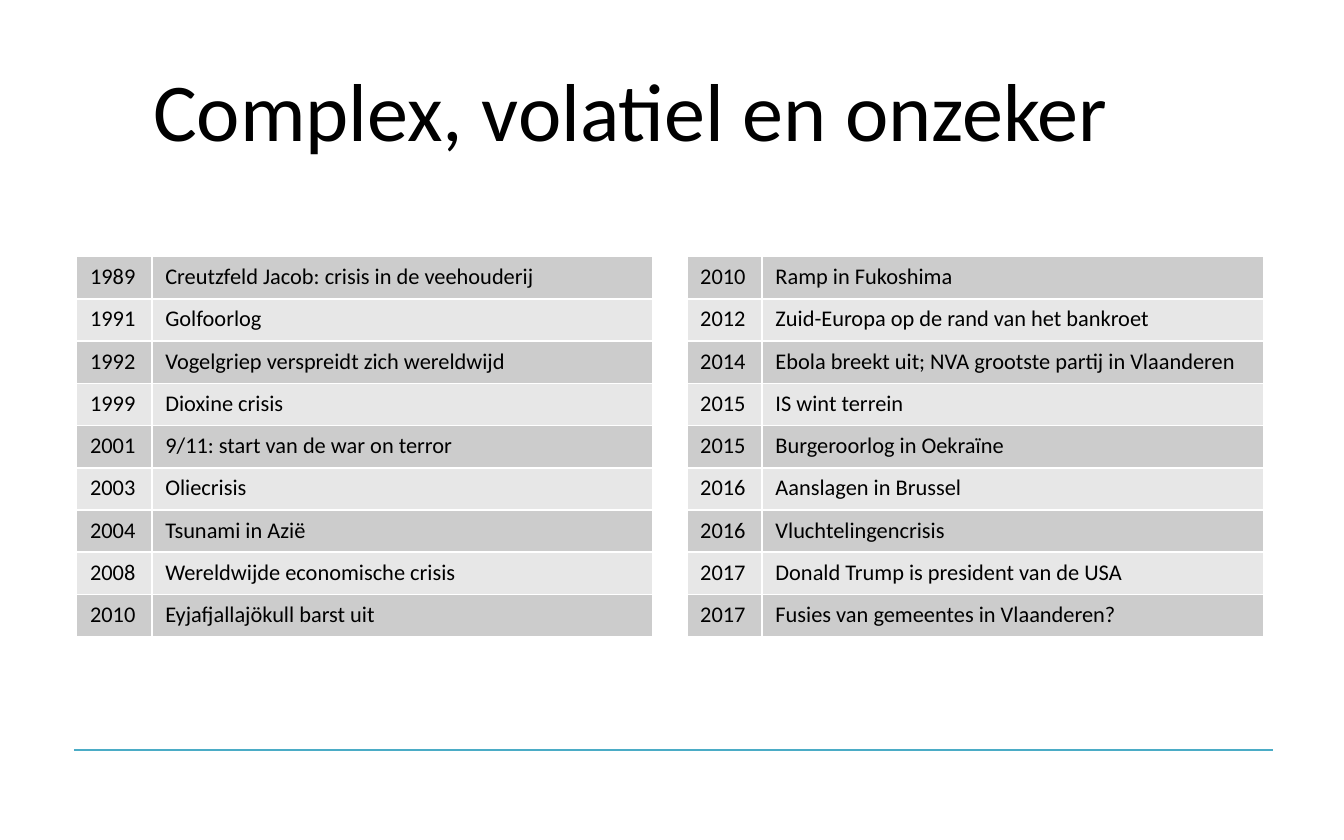
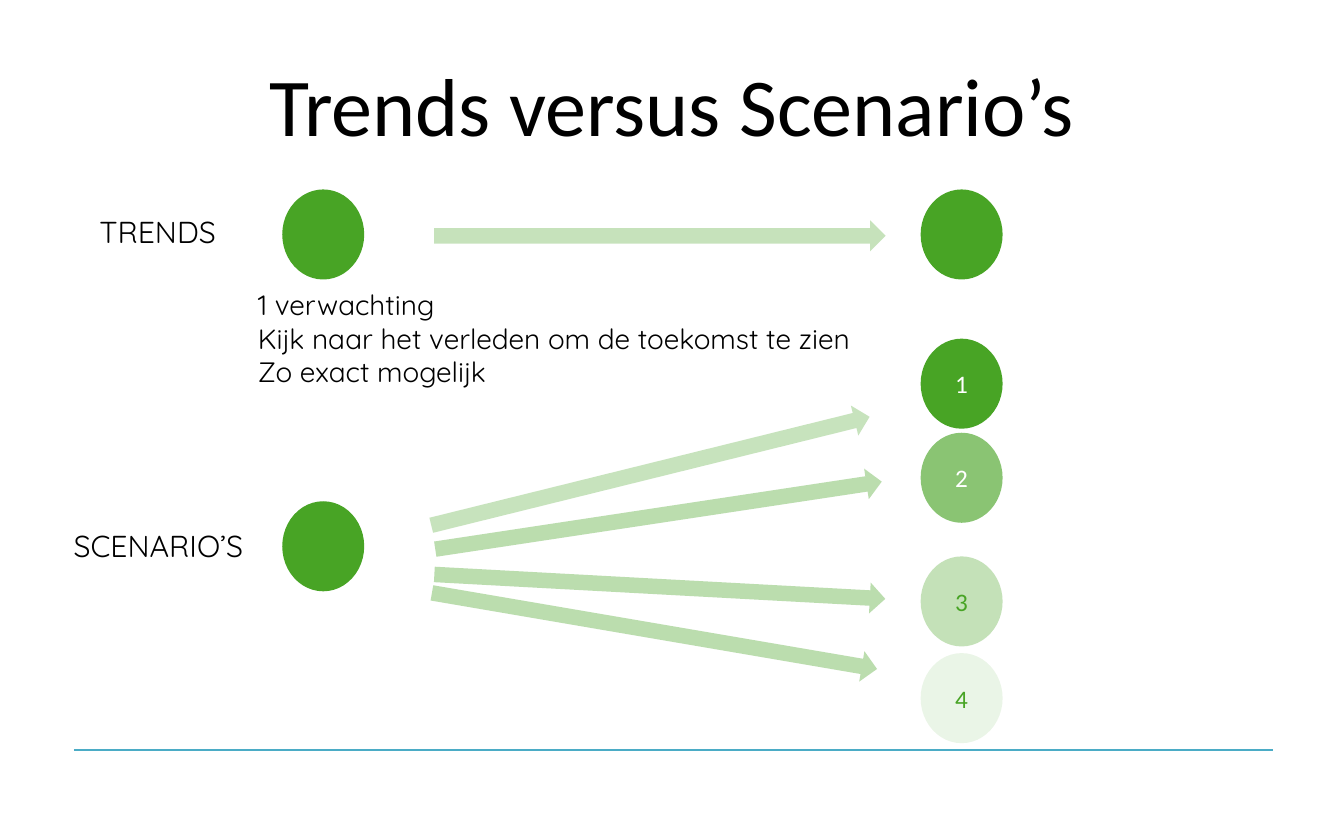
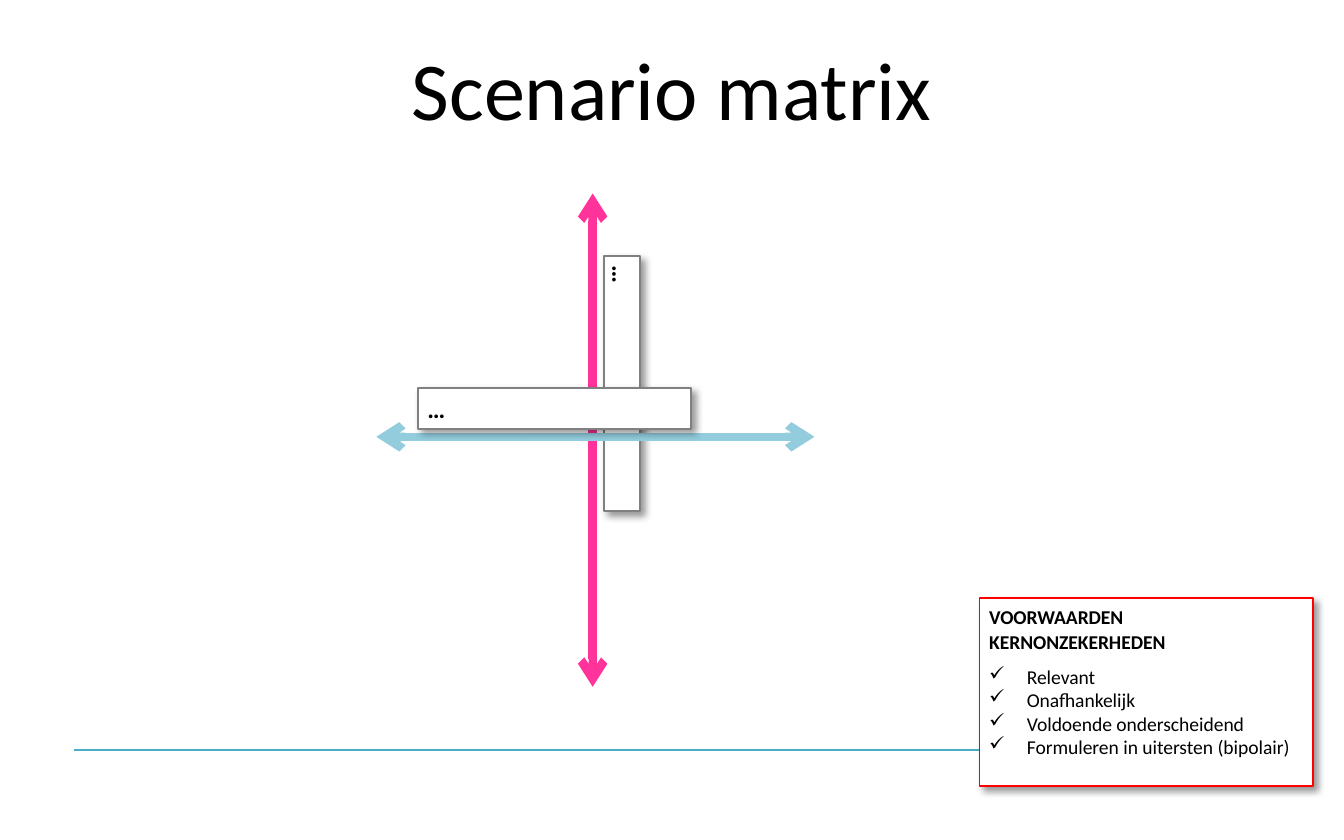
from lxml import etree
from pptx import Presentation, util as u
from pptx.dml.color import RGBColor
from pptx.enum import shapes, text
from pptx.oxml import parse_xml
from pptx.oxml.ns import nsdecls, qn

PX = 9144
BLACK, WHITE, GREEN = "000000", "FFFFFF", "48A425"
PINK, AQUA, TEAL, GREY, RED = "FF3399", "93CDDD", "4BACC6", "808080", "FF0000"
BANDS = ["CCCCCC", "E7E7E7"]
rgb = RGBColor.from_string


def write(para, words, size, colour=BLACK, face="Calibri", bold=False):
    span = para.add_run()
    span.text = words
    span.font.size, span.font.name, span.font.bold = u.Pt(size), face, bold
    span.font.color.rgb = rgb(colour)


def add_block(parent, kind, place, colour, alpha=100, turn=0, edge=None, edge_width=1):
    block = parent.add_shape(kind, *[n * PX for n in place])
    block.rotation = turn
    block.fill.solid()
    block.fill.fore_color.rgb = rgb(colour)
    block.shadow.inherit = False
    if alpha < 100:
        tint = block._element.spPr.find(qn("a:solidFill"))[0]
        etree.SubElement(tint, qn("a:alpha"), val=str(alpha * 1000))
    if edge is None:
        block.line.fill.background()
        return block
    block.line.color.rgb = rgb(edge)
    block.line.width = u.Pt(edge_width)
    block._element.spPr.find(qn("a:effectLst")).append(parse_xml(
        f'<a:outerShdw {nsdecls("a")} blurRad="50800" dist="38100" dir="2700000" algn="tl" rotWithShape="0">'
        '<a:srgbClr val="000000"><a:alpha val="40000"/></a:srgbClr></a:outerShdw>'))
    frame = block.text_frame
    frame.word_wrap = True
    frame.margin_left, frame.margin_right = 7 * PX, 10 * PX
    frame.margin_top = frame.margin_bottom = 4 * PX
    frame.paragraphs[0].alignment = text.PP_ALIGN.LEFT
    return block


deck = Presentation()
deck.slide_width, deck.slide_height = 1000 * PX, 625 * PX
layout = deck.slide_layouts[5]
STRAIGHT = shapes.MSO_CONNECTOR.STRAIGHT
RECTANGLE = shapes.MSO_SHAPE.RECTANGLE
OVAL = shapes.MSO_SHAPE.OVAL
ARROW = shapes.MSO_SHAPE.RIGHT_ARROW

pages = []
for heading, place in [
    ("Complex, volatiel en onzeker", (47, 29, 845, 104)),
    ("Trends versus Scenario’s", (50, 25, 900, 104)),
    ("Scenario matrix", (50, 13, 900, 104)),
]:
    page = deck.slides.add_slide(layout)
    title = page.shapes.title
    title.left, title.top, title.width, title.height = [n * PX for n in place]
    title.text_frame.vertical_anchor = text.MSO_ANCHOR.MIDDLE
    para = title.text_frame.paragraphs[0]
    para.alignment = text.PP_ALIGN.CENTER
    write(para, heading, 44)
    pages.append(page)
crises_page, trends_page, matrix_page = pages

footer_rule = crises_page.shapes.add_connector(STRAIGHT, 55 * PX, 558 * PX, 947 * PX, 558 * PX)
layout.shapes._spTree.append(footer_rule._element)
lines = [(footer_rule, TEAL, 1)]

crises = [
    (57, [
        ("1989", "Creutzfeld Jacob: crisis in de veehouderij"),
        ("1991", "Golfoorlog"),
        ("1992", "Vogelgriep verspreidt zich wereldwijd"),
        ("1999", "Dioxine crisis"),
        ("2001", "9/11: start van de war on terror"),
        ("2003", "Oliecrisis"),
        ("2004", "Tsunami in Azië"),
        ("2008", "Wereldwijde economische crisis"),
        ("2010", "Eyjafjallajökull barst uit"),
    ]),
    (511, [
        ("2010", "Ramp in Fukoshima"),
        ("2012", "Zuid-Europa op de rand van het bankroet"),
        ("2014", "Ebola breekt uit; NVA grootste partij in Vlaanderen"),
        ("2015", "IS wint terrein"),
        ("2015", "Burgeroorlog in Oekraïne"),
        ("2016", "Aanslagen in Brussel"),
        ("2016", "Vluchtelingencrisis"),
        ("2017", "Donald Trump is president van de USA"),
        ("2017", "Fusies van gemeentes in Vlaanderen?"),
    ]),
]
for left, rows in crises:
    table = crises_page.shapes.add_table(len(rows), 2, left * PX, 191 * PX, 429 * PX, 283 * PX).table
    table.first_row = table.horz_banding = False
    table.columns[0].width, table.columns[1].width = 56 * PX, 373 * PX
    for r, row in enumerate(rows):
        for c, words in enumerate(row):
            cell = table.cell(r, c)
            cell.margin_left = cell.margin_right = 10 * PX
            cell.margin_top = cell.margin_bottom = 5 * PX
            cell.fill.solid()
            cell.fill.fore_color.rgb = rgb(BANDS[r % 2])
            write(cell.text_frame.paragraphs[0], words, 12)
            for i, side in enumerate(["lnL", "lnR", "lnT", "lnB"]):
                cell._tc.tcPr.insert(i, parse_xml(
                    f'<a:{side} {nsdecls("a")} w="12700"><a:solidFill>'
                    f'<a:srgbClr val="{WHITE}"/></a:solidFill></a:{side}>'))

for left, top, alpha, label, colour in [
    (210, 141, 100, "", WHITE),
    (685, 141, 100, "", WHITE),
    (210, 373, 100, "", WHITE),
    (685, 252, 100, "1", WHITE),
    (685, 322, 64, "2", WHITE),
    (685, 414, 32, "3", GREEN),
    (685, 486, 11, "4", GREEN),
]:
    circle = add_block(trends_page.shapes, OVAL, (left, top, 61, 67), GREEN, alpha)
    if label:
        para = circle.text_frame.paragraphs[0]
        para.alignment = text.PP_ALIGN.CENTER
        write(para, label, 13.5, colour)

for left, top, turn, alpha in [
    (323, 164, 0, 31),
    (322, 372, 351.4, 37),
    (316, 339, 346.1, 30),
    (319, 458, 9.7, 37),
    (323, 425, 3.1, 37),
]:
    add_block(trends_page.shapes, ARROW, (left, top, 336, 23), GREEN, alpha, turn)

for place, size, words in [
    ((182, 209, 591, 90), 15, ["1 verwachting", "Kijk naar het verleden om de toekomst te zien", "Zo exact mogelijk"]),
    ((64, 154, 132, 65), 16.2, ["TRENDS"]),
    ((45, 387, 167, 65), 16.2, ["SCENARIO’S"]),
]:
    frame = trends_page.shapes.add_textbox(*[n * PX for n in place]).text_frame
    frame.word_wrap = True
    for i, sentence in enumerate(words):
        para = frame.add_paragraph() if i else frame.paragraphs[0]
        write(para, sentence, size, face="Quicksand")

for ends, colour, place, turn in [
    ((441, 144, 441, 511), PINK, (368, 272, 190, 27), 90),
    ((280, 325, 606, 325), AQUA, (311, 289, 203, 30), 0),
]:
    group = matrix_page.shapes.add_group_shape()
    axis = group.shapes.add_connector(STRAIGHT, *[n * PX for n in ends])
    lines.append((axis, colour, 4.5))
    label = add_block(group.shapes, RECTANGLE, place, WHITE, turn=turn, edge=GREY)
    write(label.text_frame.paragraphs[0], "…", 13.5, bold=True)

for line, colour, width in lines:
    line.line.color.rgb = rgb(colour)
    line.line.width = u.Pt(width)
    if line is not footer_rule:
        for end in ["a:headEnd", "a:tailEnd"]:
            etree.SubElement(line.line._get_or_add_ln(), qn(end), type="arrow")
    etree.SubElement(line._element.spPr, qn("a:effectLst"))

conditions = add_block(matrix_page.shapes, RECTANGLE, (729, 445, 248, 140), WHITE, edge=RED, edge_width=0.75)
frame = conditions.text_frame
frame.vertical_anchor = text.MSO_ANCHOR.TOP
para = frame.paragraphs[0]
para.line_spacing, para.space_after = 1.07, u.Pt(6)
write(para, "VOORWAARDEN KERNONZEKERHEDEN", 10.5, bold=True)
for condition in ["Relevant", "Onafhankelijk", "Voldoende onderscheidend", "Formuleren in uitersten (bipolair)"]:
    para = frame.add_paragraph()
    para.alignment = text.PP_ALIGN.LEFT
    props = para._p.get_or_add_pPr()
    props.set("marL", str(28 * PX))
    props.set("indent", str(-28 * PX))
    etree.SubElement(props, qn("a:buChar"), char="✓")
    write(para, condition, 10.5)

deck.save("out.pptx")
